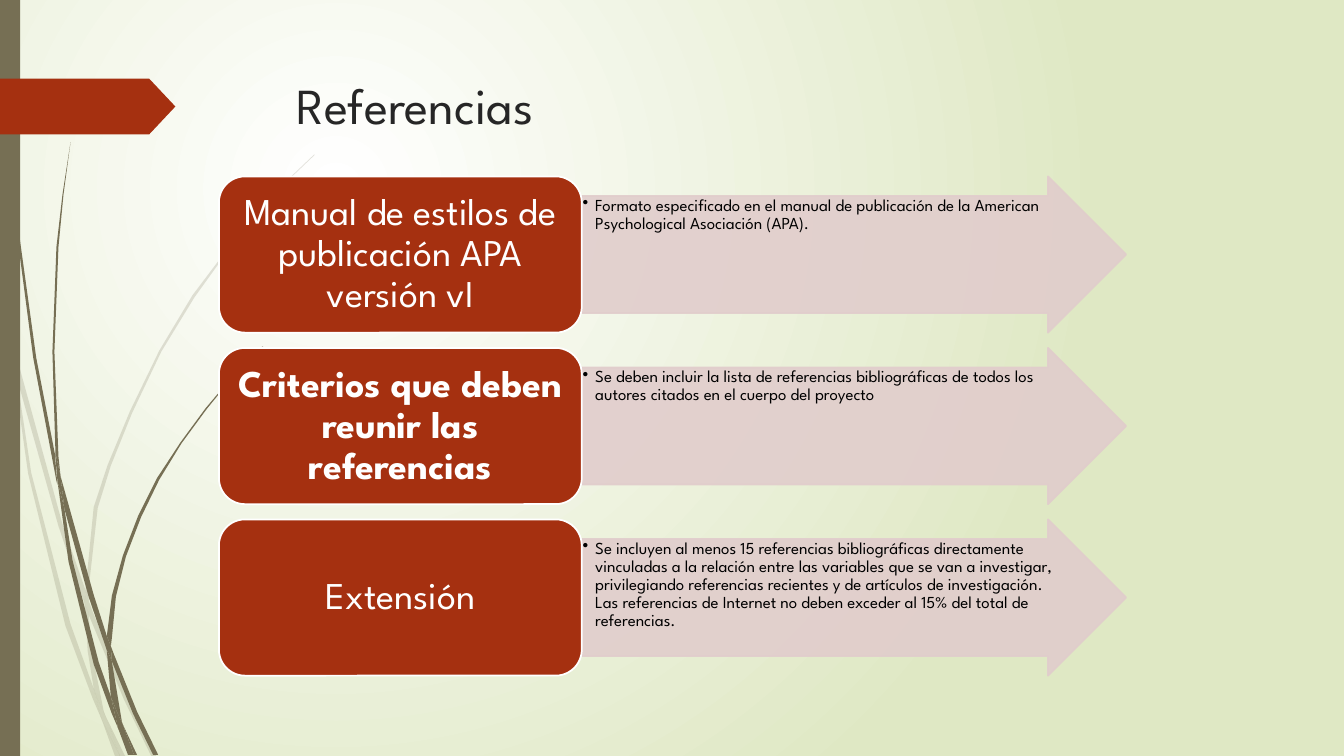
from pptx import Presentation
from pptx.dml.color import RGBColor
from pptx.enum.shapes import MSO_SHAPE
from pptx.enum.text import MSO_ANCHOR, MSO_AUTO_SIZE, PP_ALIGN
from pptx.oxml import parse_xml
from pptx.oxml.ns import nsdecls, qn
from pptx.util import Pt

RECTANGLE = MSO_SHAPE.RECTANGLE
PENTAGON = MSO_SHAPE.PENTAGON
ROUNDED = MSO_SHAPE.ROUNDED_RECTANGLE
ARROW = MSO_SHAPE.RIGHT_ARROW
TOP, MIDDLE = MSO_ANCHOR.TOP, MSO_ANCHOR.MIDDLE
LEFT, CENTER = PP_ALIGN.LEFT, PP_ALIGN.CENTER
NO_AUTOFIT = MSO_AUTO_SIZE.NONE

WISP_UNIT = 0.72

PALE_WISPS = [
    [(11, 350), (9, 322), (0, 282), (0, 299), (10, 344)],
    [(58, 522), (84, 599), (85, 586), (62, 520), (14, 345), (17, 376)],
    [(92, 607), (88, 596), (88, 610), (123, 694), (150, 750), (155, 750), (127, 692)],
    [(119, 750), (124, 750), (105, 711)],
    [(93, 683), (70, 619), (31, 469), (17, 376), (11, 350), (28, 470), (65, 621),
     (92, 693), (101, 714), (99, 707)],
    [(84, 599), (87, 646), (93, 683), (96, 692), (105, 711), (103, 706), (91, 646),
     (88, 610), (88, 608)],
    [(88, 584), (97, 504), (110, 462), (131, 410), (160, 349), (193, 295), (229, 245),
     (268, 198), (290, 175), (312, 154), (312, 153), (289, 175), (268, 197), (228, 244),
     (191, 293), (158, 348), (129, 408), (107, 461), (93, 503), (85, 584), (85, 586),
     (88, 596)],
    [(101, 714), (114, 750), (119, 750)],
    [(88, 608), (88, 610), (88, 596), (85, 586), (84, 599)],
    [(96, 692), (93, 683), (99, 707), (101, 714), (119, 750), (105, 711)],
]

DARK_WISPS = [
    [(7, 110), (17, 233), (33, 355), (56, 477), (57, 481), (55, 457), (55, 453), (36, 355),
     (19, 232), (8, 109), (5, 48), (4, 0), (3, 0), (4, 48)],
    [(88, 592), (106, 645), (106, 633), (106, 631), (93, 590), (60, 472), (64, 505)],
    [(113, 649), (110, 641), (111, 656), (132, 708), (152, 749), (157, 749), (136, 706)],
    [(110, 691), (98, 657), (72, 556), (64, 505), (57, 477), (68, 557), (93, 659),
     (111, 708), (117, 722), (116, 717)],
    [(60, 472), (58, 453), (54, 349), (58, 245), (63, 193), (70, 141), (62, 193), (56, 245),
     (52, 349), (55, 449)],
    [(133, 749), (136, 749), (122, 719)],
    [(57, 477), (64, 505), (60, 472), (55, 449), (55, 453)],
    [(111, 633), (115, 592), (125, 552), (140, 513), (158, 476), (180, 440), (205, 406),
     (231, 374), (245, 359), (261, 344), (260, 344), (245, 358), (231, 373), (204, 405),
     (179, 439), (156, 474), (137, 512), (122, 551), (111, 591), (106, 631), (110, 641)],
    [(117, 722), (127, 749), (131, 749)],
    [(106, 645), (110, 691), (116, 706), (122, 719), (121, 716), (111, 656), (109, 651)],
    [(106, 645), (109, 651), (111, 656), (110, 641), (106, 631), (106, 633)],
    [(116, 706), (110, 691), (116, 717), (117, 722), (130, 749), (133, 749), (122, 719)],
]

TOPICS = [
    ("Manual de estilos de publicación APA versión vI", False,
     "Formato especificado en el manual de publicación de la American Psychological "
     "Asociación (APA)."),
    ("Criterios que deben reunir las referencias", True,
     "Se deben incluir la lista de referencias bibliográficas de todos los autores citados "
     "en el cuerpo del proyecto"),
    ("Extensión", False,
     "Se incluyen al menos 15 referencias bibliográficas directamente vinculadas a la "
     "relación entre las variables que se van a investigar, privilegiando referencias "
     "recientes y de artículos de investigación. Las referencias de Internet no deben "
     "exceder al 15% del total de referencias."),
]


def color(hex_value):
    return RGBColor.from_string(hex_value)


class SlideBuilder:
    font = "League Spartan"
    rust = "A53010"
    olive = "766F54"
    rose = "E1CDCC"

    def __init__(self, slide):
        self.slide = slide

    def background(self, inner, outer):
        fill = self.slide.background.fill
        fill.gradient()
        for stop, hex_value, position in zip(fill.gradient_stops, (inner, outer), (0, 1)):
            stop.color.rgb = color(hex_value)
            stop.position = position
        gradient = self.slide.element.find(".//" + qn("a:gradFill"))
        gradient.replace(gradient.find(qn("a:lin")), parse_xml(
            f'<a:path {nsdecls("a")} path="circle"><a:fillToRect l="50000" t="50000" '
            'r="100000" b="100000"/></a:path>'))

    def paint(self, shape, fill, line=None, opacity=100):
        shape.shadow.inherit = False
        shape.fill.solid()
        shape.fill.fore_color.rgb = color(fill)
        if line:
            shape.line.color.rgb = color(line)
            shape.line.width = Pt(1.25)
        else:
            shape.line.fill.background()
        if opacity < 100:
            for tint in shape.element.spPr.iter(qn("a:srgbClr")):
                tint.append(parse_xml(f'<a:alpha {nsdecls("a")} val="{opacity * 1000}"/>'))

    def wisp(self, outline, opacity):
        start, *rest = outline
        builder = self.slide.shapes.build_freeform(*start, scale=Pt(WISP_UNIT))
        builder.add_line_segments(rest, close=True)
        self.paint(builder.convert_to_shape(), self.olive, opacity=opacity)

    def block(self, kind, left, top, width, height, fill, **style):
        shape = self.slide.shapes.add_shape(kind, Pt(left), Pt(top), Pt(width), Pt(height))
        self.paint(shape, fill, **style)
        return shape

    def set_text(self, shape, text, size, hex_value, align=LEFT, anchor=TOP,
                 margins=(7.2, 3.6), bold=False, bullet=False, spacing=0.9):
        frame = shape.text_frame
        frame.word_wrap = True
        frame.auto_size = NO_AUTOFIT
        frame.vertical_anchor = anchor
        frame.margin_left = frame.margin_right = Pt(margins[0])
        frame.margin_top = frame.margin_bottom = Pt(margins[1])
        frame.text = text
        paragraph = frame.paragraphs[0]
        paragraph.alignment = align
        paragraph.line_spacing = spacing
        if bullet:
            properties = paragraph._p.get_or_add_pPr()
            properties.set("marL", str(Pt(9)))
            properties.set("indent", str(-Pt(9)))
            properties.append(parse_xml(f'<a:buChar {nsdecls("a")} char="•"/>'))
        paragraph.font.name = self.font
        paragraph.font.size = Pt(size)
        paragraph.font.bold = bold
        paragraph.font.color.rgb = color(hex_value)

    def title(self, text, left, top, width, height):
        heading = self.slide.shapes.title
        heading.left, heading.top = Pt(left), Pt(top)
        heading.width, heading.height = Pt(width), Pt(height)
        self.set_text(heading, text, 36, "262626", spacing=1.0)

    def topic(self, top, label, bold, detail):
        height = 111.6
        arrow = self.block(ARROW, 415.6, top, 388.8, height, self.rose,
                           line=self.rose, opacity=90)
        arrow.adjustments[0] = 0.75
        arrow.adjustments[1] = 0.5
        self.set_text(arrow, detail, 12, "000000", margins=(0.6, 0.6), bullet=True)
        card = self.block(ROUNDED, 156.4, top, 259.2, height, self.rust, line="FFFFFF")
        self.set_text(card, label, 27, "FFFFFF", CENTER, MIDDLE, (8.1, 4.05), bold)


def main():
    presentation = Presentation()
    presentation.slide_width, presentation.slide_height = Pt(960), Pt(540)
    page = SlideBuilder(presentation.slides.add_slide(presentation.slide_layouts[5]))
    page.background("FFFFFF", "DFE8C4")
    for outlines, opacity in ((PALE_WISPS, 20), (DARK_WISPS, 100)):
        for outline in outlines:
            page.wisp(outline, opacity)
    page.block(RECTANGLE, 0, 0, 14.4, 540, page.olive)
    tag = page.block(PENTAGON, 0, 56.2, 125.3, 39.8, page.rust)
    tag.adjustments[0] = 0.47
    page.title("Referencias", 204.5, 49, 702, 100.8)
    for row, (label, bold, detail) in enumerate(TOPICS):
        page.topic(126 + row * 122.5, label, bold, detail)
    presentation.save("out.pptx")


if __name__ == "__main__":
    main()
